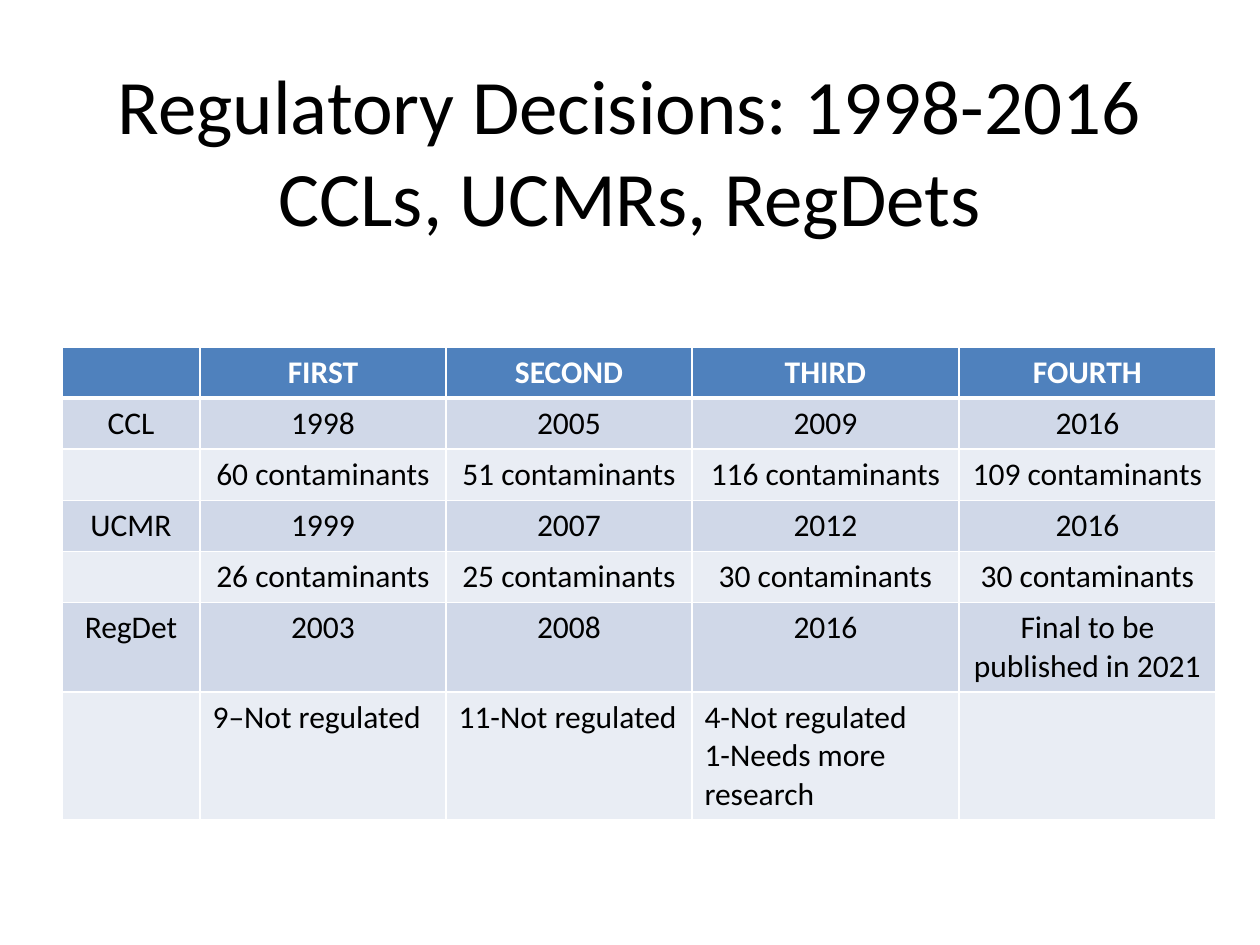
from dataclasses import dataclass

from lxml import etree
from pptx import Presentation
from pptx import util as u
from pptx.dml.color import RGBColor
from pptx.enum import text
from pptx.oxml import ns

EMU_PER_INCH = 914400
PX_PER_INCH = 126


@dataclass(frozen=True)
class Theme:
    """Hold the colours, font and type sizes of the slide."""

    font: str = "Calibri"
    title_size: int = 44
    table_size: int = 18
    ink: str = "000000"
    white: str = "FFFFFF"
    header: str = "4F81BD"
    bands: tuple = ("D0D8E8", "E9EDF4")
    rule: int = 1
    header_rule: int = 3


THEME = Theme()

TITLE = "Regulatory Decisions: 1998-2016\nCCLs, UCMRs, RegDets"
COLUMN_WIDTHS = (138, 246, 246, 267, 257)
ROW_HEIGHTS = (51, 51, 51, 51, 51, 89, 127)
DECISIONS = (
    ("", "FIRST", "SECOND", "THIRD", "FOURTH"),
    ("CCL", "1998", "2005", "2009", "2016"),
    ("", "60 contaminants", "51 contaminants", "116 contaminants", "109 contaminants"),
    ("UCMR", "1999", "2007", "2012", "2016"),
    ("", "26 contaminants", "25 contaminants", "30 contaminants", "30 contaminants"),
    ("RegDet", "2003", "2008", "2016", "Final to be published in 2021"),
    ("", "9–Not regulated", "11-Not regulated",
     "4-Not regulated\n1-Needs more research", ""),
)


def px(length):
    """Turn a length in px into EMU."""
    return u.Emu(round(length * EMU_PER_INCH / PX_PER_INCH))


def format_text(frame, size, color, alignment, bold=False):
    """Format every paragraph and run of a text frame."""
    for paragraph in frame.paragraphs:
        paragraph.alignment = alignment
        for run in paragraph.runs:
            run.font.name = THEME.font
            run.font.size = u.Pt(size)
            run.font.bold = bold
            run.font.color.rgb = RGBColor.from_string(color)


def set_borders(cell, top, bottom):
    """Draw white borders round a cell, with widths in points."""
    properties = cell._tc.get_or_add_tcPr()
    widths = {"lnL": THEME.rule, "lnR": THEME.rule, "lnT": top, "lnB": bottom}
    for tag, width in widths.items():
        line = etree.SubElement(properties, ns.qn(f"a:{tag}"), w=str(u.Pt(width)))
        fill = etree.SubElement(line, ns.qn("a:solidFill"))
        etree.SubElement(fill, ns.qn("a:srgbClr"), val=THEME.white)


def set_title(slide):
    """Place and format the slide title."""
    title = slide.shapes.title
    title.left, title.top, title.width, title.height = map(px, (63, 38, 1134, 224))
    frame = title.text_frame
    frame.vertical_anchor = text.MSO_ANCHOR.MIDDLE
    frame.paragraphs[0].text = TITLE
    format_text(frame, THEME.title_size, THEME.ink, text.PP_ALIGN.CENTER)


def fill_cell(cell, content, row):
    """Write and style one cell according to its row."""
    is_header = row == 0
    is_last = row == len(DECISIONS) - 1
    set_borders(
        cell,
        top=THEME.header_rule if row == 1 else THEME.rule,
        bottom=THEME.header_rule if is_header else THEME.rule,
    )
    background = THEME.header if is_header else THEME.bands[(row - 1) % 2]
    cell.fill.solid()
    cell.fill.fore_color.rgb = RGBColor.from_string(background)
    cell.text_frame.text = content
    format_text(
        cell.text_frame,
        THEME.table_size,
        THEME.white if is_header else THEME.ink,
        text.PP_ALIGN.LEFT if is_last else text.PP_ALIGN.CENTER,
        bold=is_header,
    )


def add_decision_table(slide):
    """Add the table of regulatory decisions."""
    table = slide.shapes.add_table(
        len(ROW_HEIGHTS), len(COLUMN_WIDTHS),
        px(62), px(347), px(sum(COLUMN_WIDTHS)), px(sum(ROW_HEIGHTS)),
    ).table
    for column, width in zip(table.columns, COLUMN_WIDTHS):
        column.width = px(width)
    for row, height in zip(table.rows, ROW_HEIGHTS):
        row.height = px(height)
    for row, contents in enumerate(DECISIONS):
        for column, content in enumerate(contents):
            fill_cell(table.cell(row, column), content, row)


def main():
    """Build and save the presentation."""
    presentation = Presentation()
    presentation.slide_width = px(1260)
    presentation.slide_height = px(945)
    slide = presentation.slides.add_slide(
        presentation.slide_layouts.get_by_name("Title Only")
    )
    set_title(slide)
    add_decision_table(slide)
    presentation.save("out.pptx")


if __name__ == "__main__":
    main()
